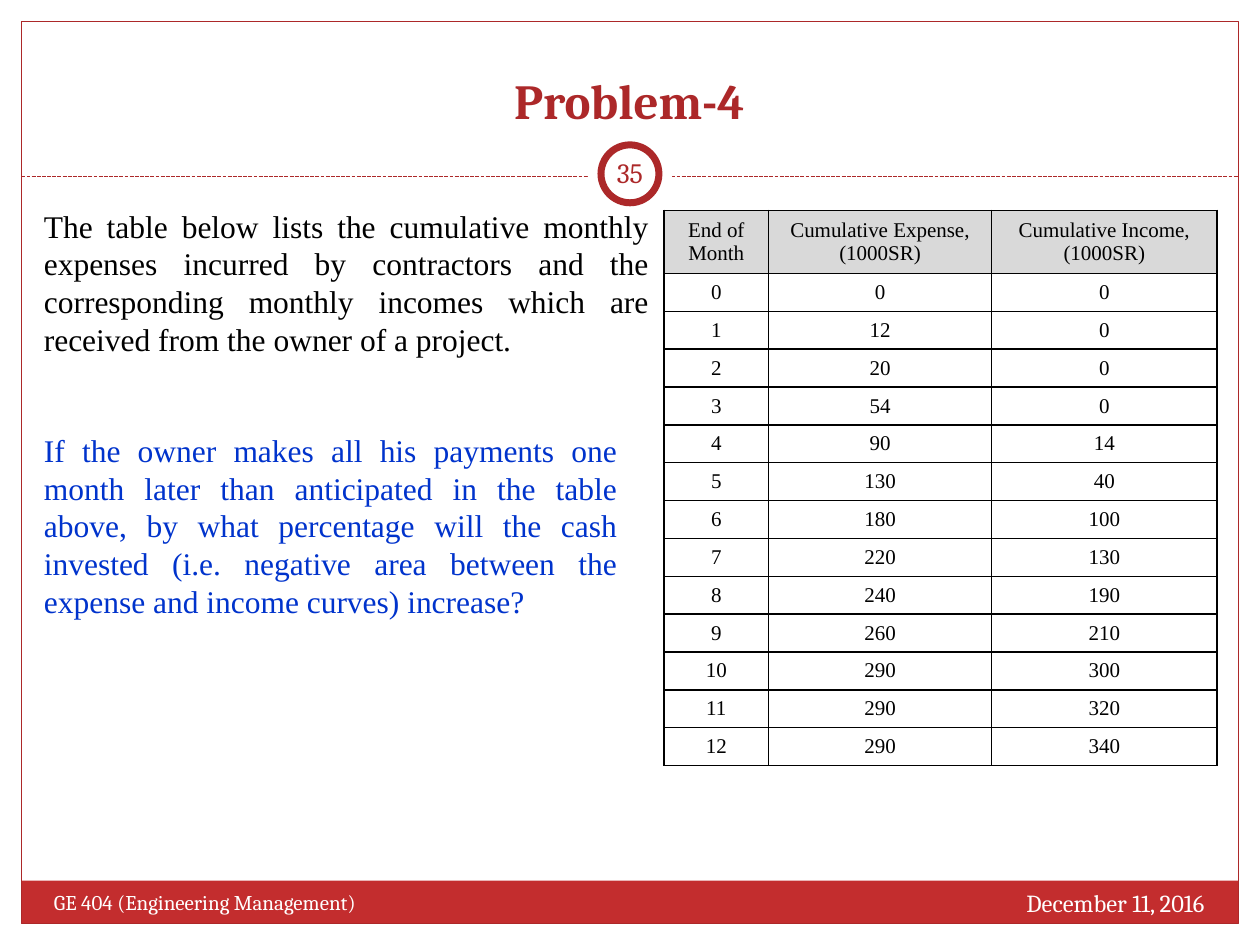
from lxml.etree import SubElement
from pptx import Presentation
from pptx.dml.color import RGBColor
from pptx.enum.dml import MSO_LINE
from pptx.enum.shapes import MSO_CONNECTOR, MSO_SHAPE
from pptx.enum.text import MSO_ANCHOR as Anchor, PP_ALIGN as Align
from pptx.oxml.ns import qn
from pptx.util import Inches, Pt

RED = RGBColor(0xAC, 0x28, 0x29)
FOOTER_RED = RGBColor(0xC3, 0x2D, 0x2E)
BLUE = RGBColor(0x00, 0x33, 0xCC)
GREY = RGBColor(0xD9, 0xD9, 0xD9)
WHITE = RGBColor(0xFF, 0xFF, 0xFF)
BLACK = RGBColor(0x00, 0x00, 0x00)
HEADING_FONT = "Cambria"
BODY_FONT = "Times New Roman"

HEADERS = ["End of Month", "Cumulative Expense, (1000SR)", "Cumulative Income, (1000SR)"]
EXPENSES = [0, 12, 20, 54, 90, 130, 180, 220, 240, 260, 290, 290, 290]
INCOMES = [0, 0, 0, 0, 14, 40, 100, 130, 190, 210, 300, 320, 340]
PROBLEM = ("The table below lists the cumulative monthly expenses incurred by contractors "
           "and the corresponding monthly incomes which are received from the owner of a project.")
QUESTION = ("If the owner makes all his payments one month later than anticipated in the table "
            "above, by what percentage will the cash invested (i.e. negative area between the "
            "expense and income curves) increase?")


def write_text(frame, text, size, font=BODY_FONT, color=BLACK, bold=False,
               align=Align.LEFT, anchor=Anchor.TOP):
    frame.word_wrap = True
    frame.vertical_anchor = anchor
    para = frame.paragraphs[0]
    para.alignment = align
    span = para.add_run()
    span.text = text
    span.font.size = Pt(size)
    span.font.name = font
    span.font.bold = bold
    span.font.color.rgb = color


def add_text(page, box, text, size, margin=None, **style):
    frame = page.shapes.add_textbox(*map(Inches, box)).text_frame
    if margin is not None:
        frame.margin_left = frame.margin_right = Inches(margin)
        frame.margin_top = frame.margin_bottom = Inches(margin)
    write_text(frame, text, size, **style)


def add_panel(page, box, kind=MSO_SHAPE.RECTANGLE, fill=None, line=None, width=0.75):
    shape = page.shapes.add_shape(kind, *map(Inches, box))
    shape.shadow.inherit = False
    if fill is None:
        shape.fill.background()
    else:
        shape.fill.solid()
        shape.fill.fore_color.rgb = fill
    if line is None:
        shape.line.fill.background()
    else:
        shape.line.color.rgb = line
        shape.line.width = Pt(width)


def add_dashed_rule(page, left, right, y):
    rule = page.shapes.add_connector(
        MSO_CONNECTOR.STRAIGHT, Inches(left), Inches(y), Inches(right), Inches(y))
    rule.line.color.rgb = RED
    rule.line.width = Pt(0.75)
    rule.line.dash_style = MSO_LINE.SQUARE_DOT
    SubElement(rule._element.spPr, qn("a:effectLst"))


def add_frame(page, box):
    """Draw the border, the footer band inside it and the footer texts."""
    left, top, width, height = box
    band_top = top + height - 0.34
    add_panel(page, (left, band_top, width, 0.34), fill=FOOTER_RED)
    add_panel(page, box, line=RED)
    add_text(page, (left + 0.16, band_top + 0.02, 3.92, 0.4),
             "GE 404 (Engineering Management)", 12, font=HEADING_FONT, color=WHITE)
    add_text(page, (left + width - 3.5, band_top + 0.01, 3.33, 0.4),
             "December 11, 2016", 14, font=HEADING_FONT, color=WHITE, align=Align.RIGHT)


def add_heading(page, box, rule_y):
    """Write the title, with a dashed rule and the page number badge below it."""
    add_text(page, box, "Problem-4", 28, font=HEADING_FONT, color=RED, bold=True,
             align=Align.CENTER, anchor=Anchor.BOTTOM)
    add_dashed_rule(page, 0.17, 9.83, rule_y)
    center_x, center_y = 5, rule_y - 0.02
    for size, line in ((0.67, None), (0.46, RED)):
        badge = (center_x - size / 2, center_y - size / 2, size, size)
        add_panel(page, badge, MSO_SHAPE.OVAL, fill=WHITE, line=line, width=4)
    add_text(page, (center_x - 0.25, center_y - 0.25, 0.5, 0.48), "35", 16, margin=0.05,
             font=HEADING_FONT, color=RED, align=Align.CENTER, anchor=Anchor.MIDDLE)


def set_borders(cell):
    properties = cell._tc.get_or_add_tcPr()
    for position, side in enumerate(("a:lnL", "a:lnR", "a:lnT", "a:lnB")):
        line = properties.makeelement(qn(side), {"w": str(Pt(1))})
        properties.insert(position, line)
        fill = SubElement(line, qn("a:solidFill"))
        SubElement(fill, qn("a:srgbClr"), val=str(BLACK))


def add_cash_table(page, box):
    rows = [HEADERS, *zip(range(len(EXPENSES)), EXPENSES, INCOMES)]
    table = page.shapes.add_table(len(rows), len(HEADERS), *map(Inches, box)).table
    for column, width in zip(table.columns, (0.83, 1.77, 1.79)):
        column.width = Inches(width)
    for index, values in enumerate(rows):
        table.rows[index].height = Inches(0.3 if index else 0.5)
        for column, value in enumerate(values):
            cell = table.cell(index, column)
            if index:
                cell.fill.background()
            else:
                cell.fill.solid()
                cell.fill.fore_color.rgb = GREY
            set_borders(cell)
            write_text(cell.text_frame, str(value), 12, align=Align.CENTER)
            cell.vertical_anchor = Anchor.MIDDLE


def main():
    deck = Presentation()
    deck.slide_width, deck.slide_height = Inches(10), Inches(7.5)
    page = deck.slides.add_slide(deck.slide_layouts[6])
    add_frame(page, (0.17, 0.17, 9.66, 7.16))
    add_heading(page, (0.33, 0.25, 9.33, 0.83), rule_y=1.4)
    add_text(page, (0.25, 1.59, 5, 1.31), PROBLEM, 18, align=Align.JUSTIFY)
    add_cash_table(page, (5.27, 1.67, 4.39, 4.4))
    add_text(page, (0.25, 3.37, 4.75, 1.62), QUESTION, 18, color=BLUE, align=Align.JUSTIFY)
    deck.save("out.pptx")


if __name__ == "__main__":
    main()
